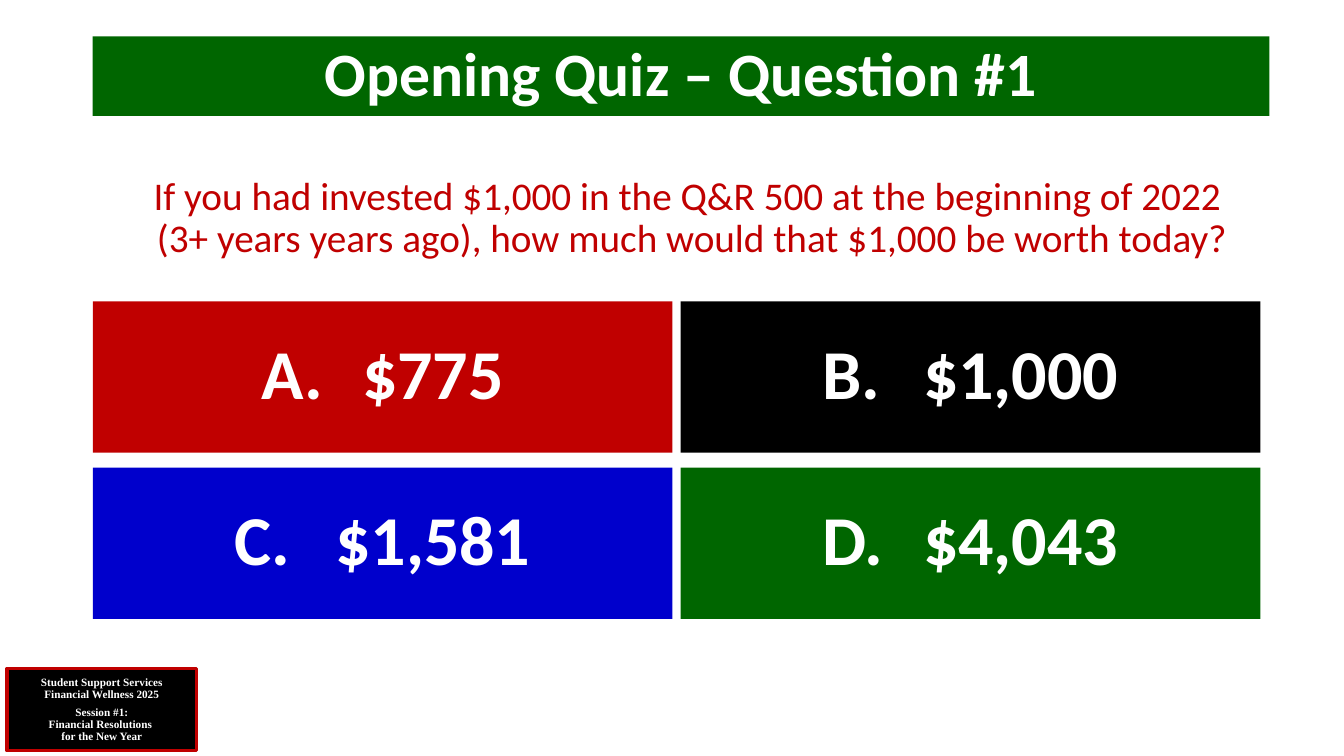
from pptx import Presentation
from pptx.dml.color import RGBColor
from pptx.enum import shapes, text
from pptx.util import Inches, Pt


def color(value):
    return RGBColor.from_string(value)


def add_panel(page, place, fill, paragraphs, size, ink="FFFFFF", font="Calibri", bold=True):
    box = page.shapes.add_shape(shapes.MSO_SHAPE.RECTANGLE, *map(Inches, place))
    box.shadow.inherit = False
    box.line.fill.background()
    if fill:
        box.fill.solid()
        box.fill.fore_color.rgb = color(fill)
    else:
        box.fill.background()
    frame = box.text_frame
    frame.word_wrap = True
    frame.vertical_anchor = text.MSO_ANCHOR.MIDDLE
    for index, lines in enumerate(paragraphs):
        para = frame.add_paragraph() if index else frame.paragraphs[0]
        para.alignment = text.PP_ALIGN.CENTER
        para.line_spacing = 0.9
        for number, line in enumerate(lines):
            if number:
                para.add_line_break()
            span = para.add_run()
            span.text = line
            span.font.name = font
            span.font.size = Pt(size)
            span.font.bold = bold
            span.font.color.rgb = color(ink)
    return box


deck = Presentation()
deck.slide_width = Inches(13.33)
deck.slide_height = Inches(7.5)
page = deck.slides.add_slide(deck.slide_layouts[6])

session = add_panel(
    page, (0.07, 6.63, 1.88, 0.82), "000000",
    [
        ["Student Support Services"],
        ["Financial Wellness 2025"],
        ["Session #1:", "Financial Resolutions ", "for the New Year"],
    ],
    8, font="Times New Roman",
)
session.line.color.rgb = color("C00000")
session.line.width = Pt(2.25)
session.text_frame.paragraphs[2].space_before = Pt(4)

add_panel(page, (0.92, 0.36, 11.67, 0.79), "006600", [["Opening Quiz – Question #1"]], 44)

question = [
    "If you had invested $1,000 in the Q&R 500 at the beginning of 2022 ",
    "(3+ years years ago), how much would that $1,000 be worth today?",
]
add_panel(page, (0.92, 1.67, 11.88, 1), None, [question], 28, ink="C00000", bold=False)

answers = [
    ("A.\t$775", "C00000"),
    ("B.\t$1,000", "000000"),
    ("C.\t$1,581", "0000CC"),
    ("D.\t$4,043", "006600"),
]
for index, (answer, fill) in enumerate(answers):
    row, column = divmod(index, 2)
    place = (0.92 + 5.83 * column, 2.99 + 1.65 * row, 5.75, 1.5)
    add_panel(page, place, fill, [[answer]], 50)

deck.save("out.pptx")
